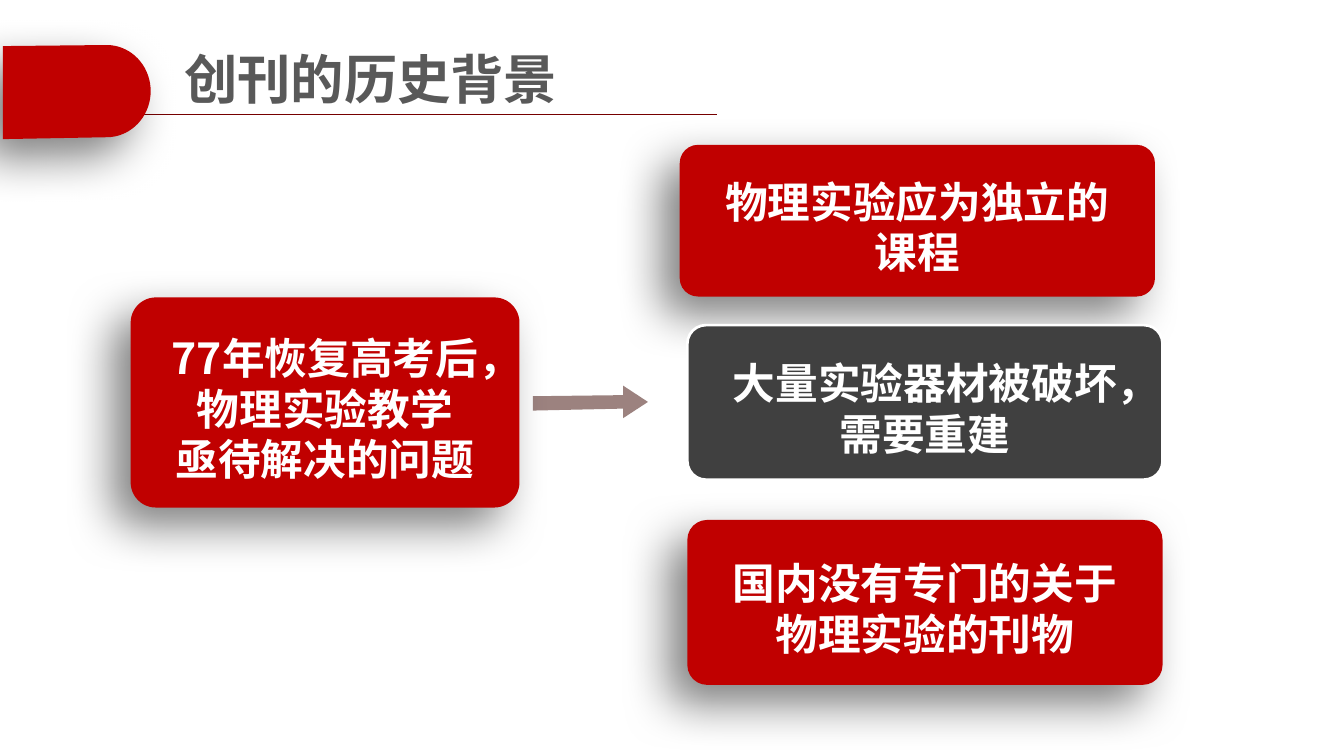
import math

import pptx
import pptx.dml.color
import pptx.enum.shapes
import pptx.enum.text
import pptx.oxml
import pptx.oxml.ns
import pptx.util
from pptx.util import Pt

FONT = "Noto Sans CJK SC"
RED, DARK, GREY, WHITE = "C00000", "404040", "595959", "FFFFFF"
NS = 'xmlns:a="http://schemas.openxmlformats.org/drawingml/2006/main"'


def rgb(value):
    return pptx.dml.color.RGBColor.from_string(value)


def paint(s, fill, line=None, width=2):
    s.fill.solid()
    s.fill.fore_color.rgb = rgb(fill)
    if line:
        s.line.color.rgb = rgb(line)
        s.line.width = Pt(width)
    else:
        s.line.fill.background()
    s.shadow.inherit = False


def add_shadow(s):
    effects = s._element.spPr.find(pptx.oxml.ns.qn("a:effectLst"))
    effects.append(pptx.oxml.parse_xml(
        f'<a:outerShdw {NS} blurRad="{Pt(35)}" dist="{Pt(20)}" dir="{135 * 60000}" '
        'algn="tr" rotWithShape="0"><a:srgbClr val="000000">'
        '<a:alpha val="50000"/></a:srgbClr></a:outerShdw>'))


def add_run(p, text, size, color):
    r = p.add_run()
    r.text = text
    r.font.size = Pt(size)
    r.font.bold = True
    r.font.color.rgb = rgb(color)
    r.font.name = FONT
    r._r.get_or_add_rPr().append(
        pptx.oxml.parse_xml(f'<a:ea {NS} typeface="{FONT}"/>'))


def set_frame(tf, left, top, right, bottom):
    tf.word_wrap = True
    tf.vertical_anchor = pptx.enum.text.MSO_ANCHOR.MIDDLE
    tf.margin_left, tf.margin_top = Pt(left), Pt(top)
    tf.margin_right, tf.margin_bottom = Pt(right), Pt(bottom)


def add_card(shapes, box, lines, inset, fill=RED):
    s = shapes.add_shape(pptx.enum.shapes.MSO_SHAPE.ROUNDED_RECTANGLE,
                         *[Pt(v) for v in box])
    s.adjustments[0] = 0.12
    if fill == RED:
        paint(s, fill)
        add_shadow(s)
    else:
        paint(s, fill, WHITE)
    tf = s.text_frame
    set_frame(tf, inset, 12, inset, 3)
    for i, text in enumerate(lines):
        p = tf.add_paragraph() if i else tf.paragraphs[0]
        p.alignment = pptx.enum.text.PP_ALIGN.CENTER
        p.line_spacing = Pt(38)
        add_run(p, text, 32, WHITE)


def add_outline(shapes, points, fill):
    builder = shapes.build_freeform(Pt(points[0][0]), Pt(points[0][1]))
    builder.add_line_segments([(Pt(x), Pt(y)) for x, y in points[1:]])
    s = builder.convert_to_shape()
    paint(s, fill)
    return s


def add_header(shapes):
    # Rule under the title
    line = shapes.add_connector(pptx.enum.shapes.MSO_CONNECTOR.STRAIGHT,
                                Pt(66), Pt(85.7), Pt(538), Pt(85.7))
    line.line.color.rgb = rgb("760000")
    line.line.width = Pt(0.75)
    line._element.spPr.append(pptx.oxml.parse_xml(f"<a:effectLst {NS}/>"))

    # Tab with a round right end
    arc = [(80 + 33 * math.cos(math.radians(a)), 68.4 + 34.6 * math.sin(math.radians(a)))
           for a in range(-90, 91, 5)]
    add_shadow(add_outline(shapes, [(2.2, 34.6), *arc, (2.2, 104.4)], RED))

    # Title
    s = shapes.add_textbox(Pt(129.6), Pt(23), Pt(682), Pt(71.3))
    set_frame(s.text_frame, 8.6, 4.3, 8.6, 4.3)
    add_run(s.text_frame.paragraphs[0], "创刊的历史背景", 40, GREY)


def add_arrow(shapes):
    s = add_outline(shapes, [(399.6, 308.2), (467.3, 306.7), (467.3, 313.9), (486, 301.7),
                             (467.3, 289.4), (467.3, 296.6), (399.6, 297.4)], "3A0700")
    color = s._element.spPr.find(".//" + pptx.oxml.ns.qn("a:srgbClr"))
    color.append(pptx.oxml.parse_xml(f'<a:alpha {NS} val="50000"/>'))


def main():
    prs = pptx.Presentation()
    prs.slide_width, prs.slide_height = Pt(1008), Pt(567.36)
    shapes = prs.slides.add_slide(prs.slide_layouts[6]).shapes

    add_header(shapes)

    # Three problems on the right
    problems = [
        (509.8, 108.7, 113.8, "物理实验应为独立的课程", RED),
        (515.5, 244, 116, "大量实验器材被破坏，需要重建", DARK),
        (515.5, 390.2, 123.8, "国内没有专门的关于物理实验的刊物", RED),
    ]
    for left, top, height, text, fill in problems:
        add_card(shapes, (left, top, 356.4, height), [text], 16.5, fill)

    # Background on the left, with the arrow to the problems
    add_arrow(shapes)
    add_card(shapes, (98, 223.2, 291.6, 157.7),
             ["77年恢复高考后，物理实验教学", "亟待解决的问题"], 12.5)

    prs.save("out.pptx")


if __name__ == "__main__":
    main()
